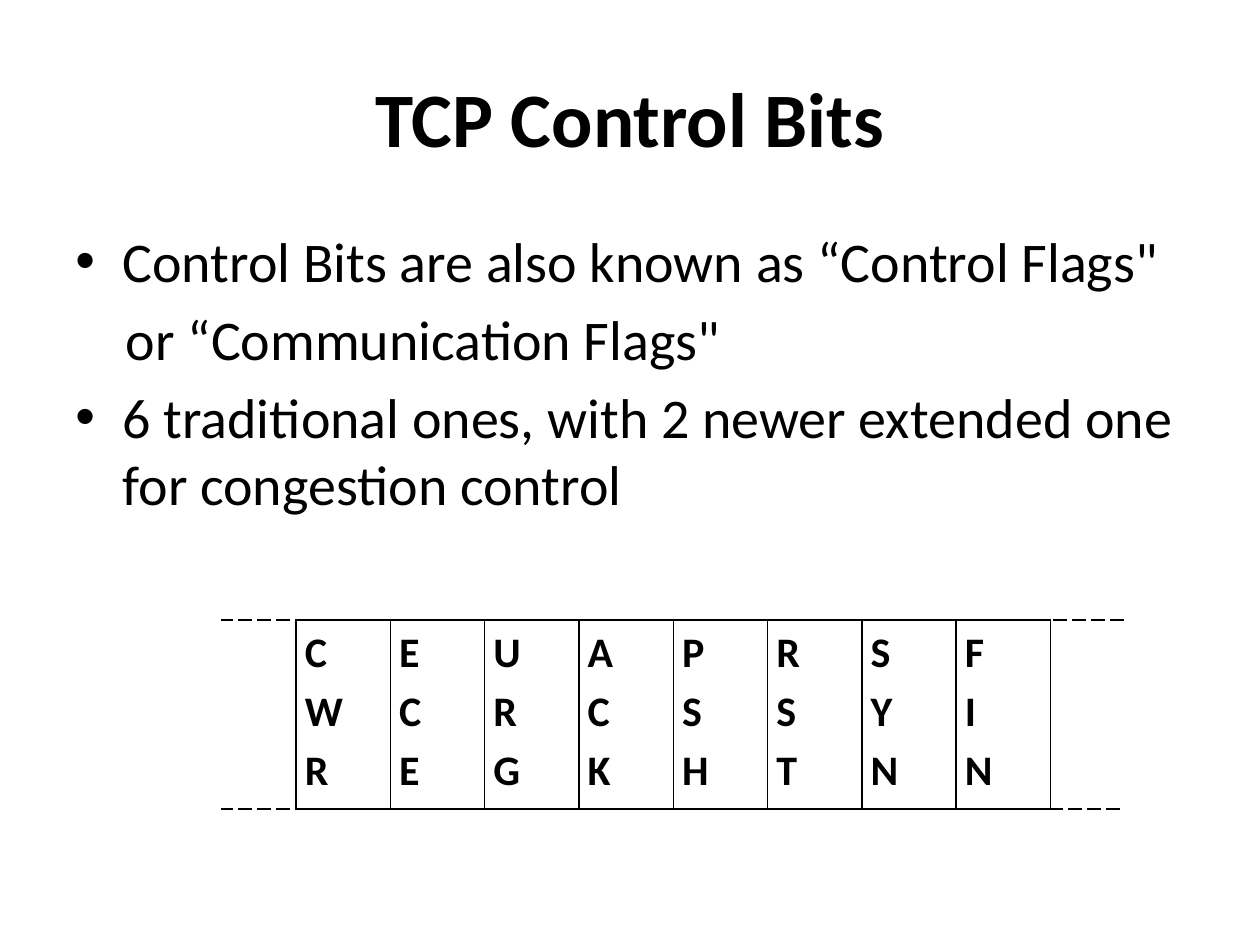
import lxml.etree
import pptx
import pptx.dml.color
import pptx.enum.dml
import pptx.enum.shapes
import pptx.enum.text
import pptx.oxml.ns
import pptx.util

Pt = pptx.util.Pt
ALIGN = pptx.enum.text.PP_ALIGN
ANCHOR = pptx.enum.text.MSO_ANCHOR
BLACK = pptx.dml.color.RGBColor(0, 0, 0)
FONT = "Calibri"

TABLE_LEFT, TABLE_TOP, COLUMN_WIDTH, TABLE_HEIGHT = 169.2, 354.24, 53.9, 108
TABLE_BOTTOM = TABLE_TOP + TABLE_HEIGHT
FLAGS = ["CWR", "ECE", "URG", "ACK", "PSH", "RST", "SYN", "FIN"]
BULLET_INDENT = 27
BODY_LINES = [
    ("Control Bits are also known as “Control Flags\"", True),
    ("or “Communication Flags\"", False),
    ("6 traditional ones, with 2 newer extended one for congestion control", True),
]
DASHES = [
    (165.6, 126, TABLE_TOP),
    (165.6, 126, TABLE_BOTTOM),
    (642.24, 601.92, TABLE_TOP),
    (640.08, 599.76, TABLE_BOTTOM),
]


def add_element(parent, tag, **attributes):
    return lxml.etree.SubElement(parent, pptx.oxml.ns.qn(tag), attributes)


def write_text(text, *, paragraph, size, bold=False, align=ALIGN.LEFT,
               before=0, line_spacing=None, indent=0, bullet=False):
    run = paragraph.add_run()
    run.text = text
    run.font.name = FONT
    run.font.size = Pt(size)
    run.font.bold = bold
    run.font.color.rgb = BLACK
    paragraph.alignment = align
    paragraph.space_before = Pt(before)
    paragraph.line_spacing = line_spacing
    properties = paragraph._p.get_or_add_pPr()
    properties.set("marL", str(Pt(indent)))
    properties.set("indent", str(-Pt(indent) if bullet else 0))
    if bullet:
        add_element(properties, "a:buFont", typeface="Arial")
        add_element(properties, "a:buChar", char="•")
    else:
        add_element(properties, "a:buNone")


def next_paragraph(text_frame, index):
    return text_frame.add_paragraph() if index else text_frame.paragraphs[0]


class SlideBuilder:
    def __init__(self, slide, line_width=1):
        self.slide = slide
        self.line_width = line_width

    def text_box(self, left, top, width, height, anchor):
        shape = self.slide.shapes.add_textbox(Pt(left), Pt(top), Pt(width), Pt(height))
        shape.text_frame.word_wrap = True
        shape.text_frame.vertical_anchor = anchor
        return shape.text_frame

    def title(self, text):
        frame = self.text_box(36, 21.6, 648, 90, ANCHOR.MIDDLE)
        write_text(text, paragraph=frame.paragraphs[0], size=44, bold=True,
                   align=ALIGN.CENTER)

    def body(self, lines):
        frame = self.text_box(36, 126, 648, 356.4, ANCHOR.TOP)
        for index, (text, bullet) in enumerate(lines):
            write_text(text, paragraph=next_paragraph(frame, index), size=32,
                       before=6, indent=BULLET_INDENT if bullet else 28.9,
                       bullet=bullet)

    def flag_table(self, flags):
        shape = self.slide.shapes.add_table(
            1, len(flags), Pt(TABLE_LEFT), Pt(TABLE_TOP),
            Pt(COLUMN_WIDTH * len(flags)), Pt(TABLE_HEIGHT))
        table = shape.table
        table.first_row = table.horz_banding = False
        for column, flag in enumerate(flags):
            table.columns[column].width = Pt(COLUMN_WIDTH)
            cell = table.cell(0, column)
            cell.margin_left = cell.margin_right = Pt(5)
            cell.margin_top = cell.margin_bottom = Pt(0)
            self.cell_borders(cell)
            cell.fill.background()
            for index, letter in enumerate(flag):
                write_text(letter, paragraph=next_paragraph(cell.text_frame, index),
                           size=24, bold=True, line_spacing=1.15)

    def cell_borders(self, cell):
        properties = cell._tc.get_or_add_tcPr()
        for side in ("a:lnL", "a:lnR", "a:lnT", "a:lnB"):
            border = add_element(properties, side, w=str(Pt(self.line_width)))
            fill = add_element(border, "a:solidFill")
            add_element(fill, "a:srgbClr", val=str(BLACK))

    def dashed_line(self, start, end, height):
        connector = self.slide.shapes.add_connector(
            pptx.enum.shapes.MSO_CONNECTOR.STRAIGHT,
            Pt(start), Pt(height), Pt(end), Pt(height))
        connector.line.color.rgb = BLACK
        connector.line.width = Pt(self.line_width)
        connector.line.dash_style = pptx.enum.dml.MSO_LINE.LONG_DASH
        add_element(connector._element.spPr, "a:effectLst")


def main():
    presentation = pptx.Presentation()
    presentation.slide_width = Pt(720)
    presentation.slide_height = Pt(540)
    slide = presentation.slides.add_slide(presentation.slide_layouts[6])
    builder = SlideBuilder(slide)
    builder.title("TCP Control Bits")
    builder.body(BODY_LINES)
    builder.flag_table(FLAGS)
    for start, end, height in DASHES:
        builder.dashed_line(start, end, height)
    presentation.save("out.pptx")


if __name__ == "__main__":
    main()
